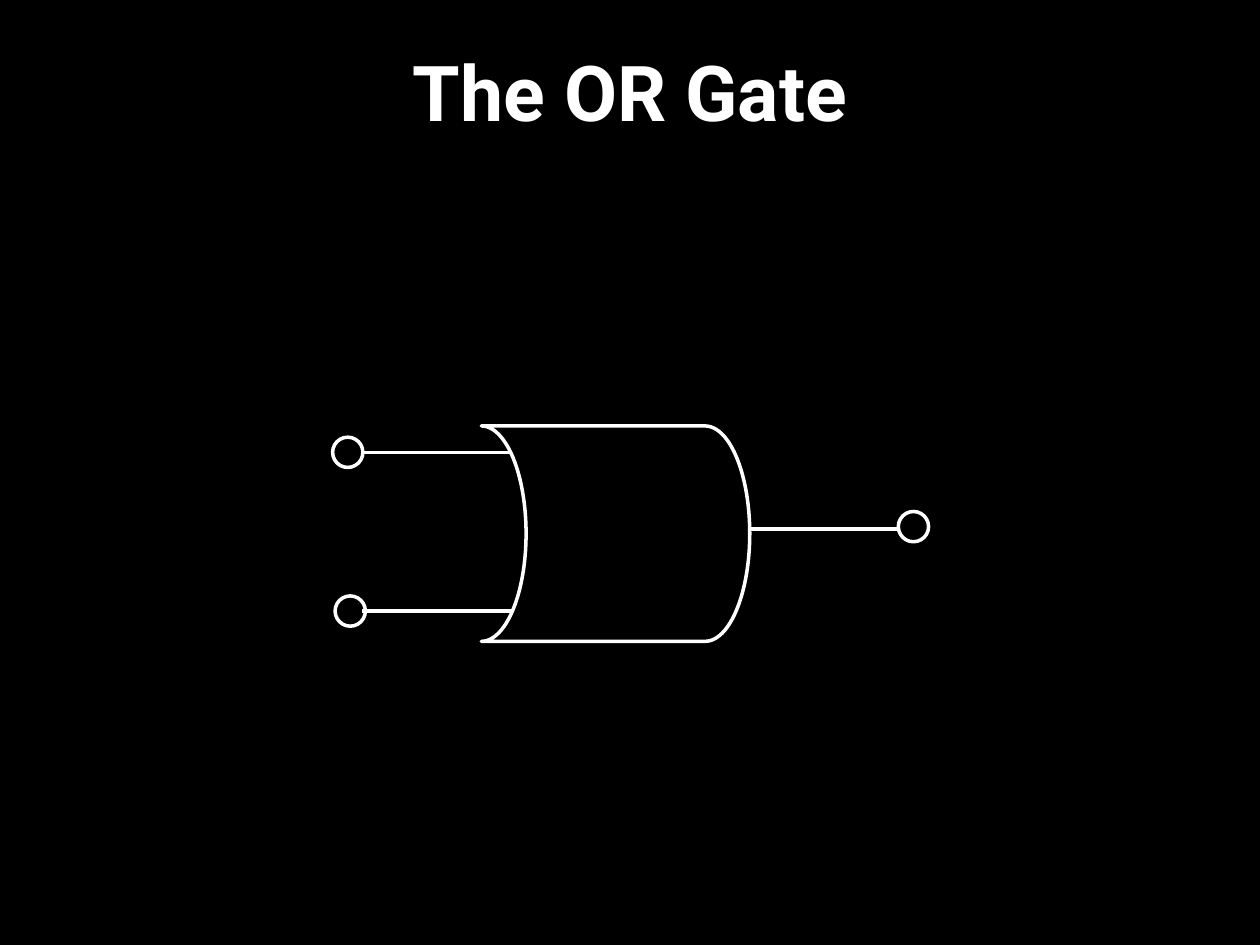
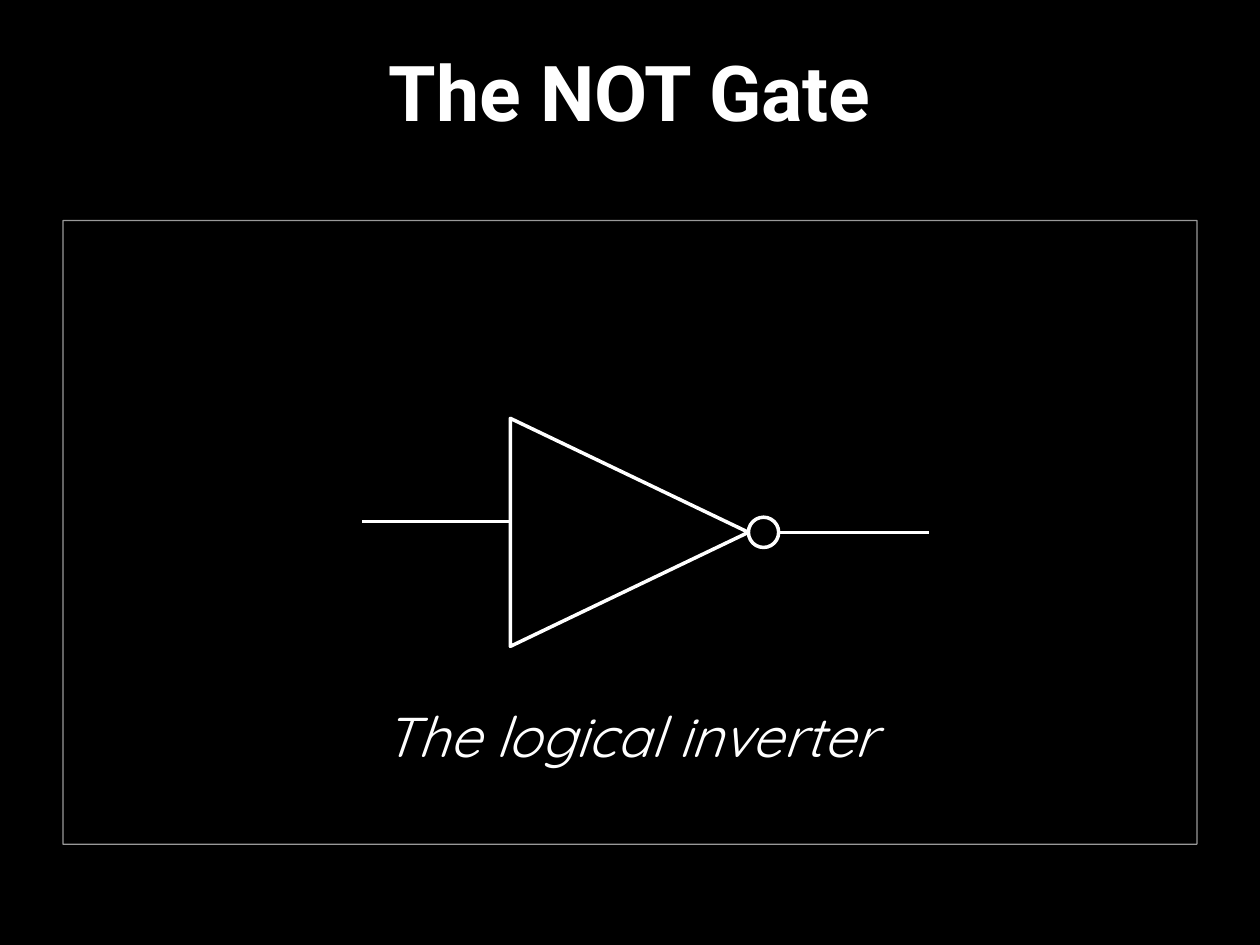
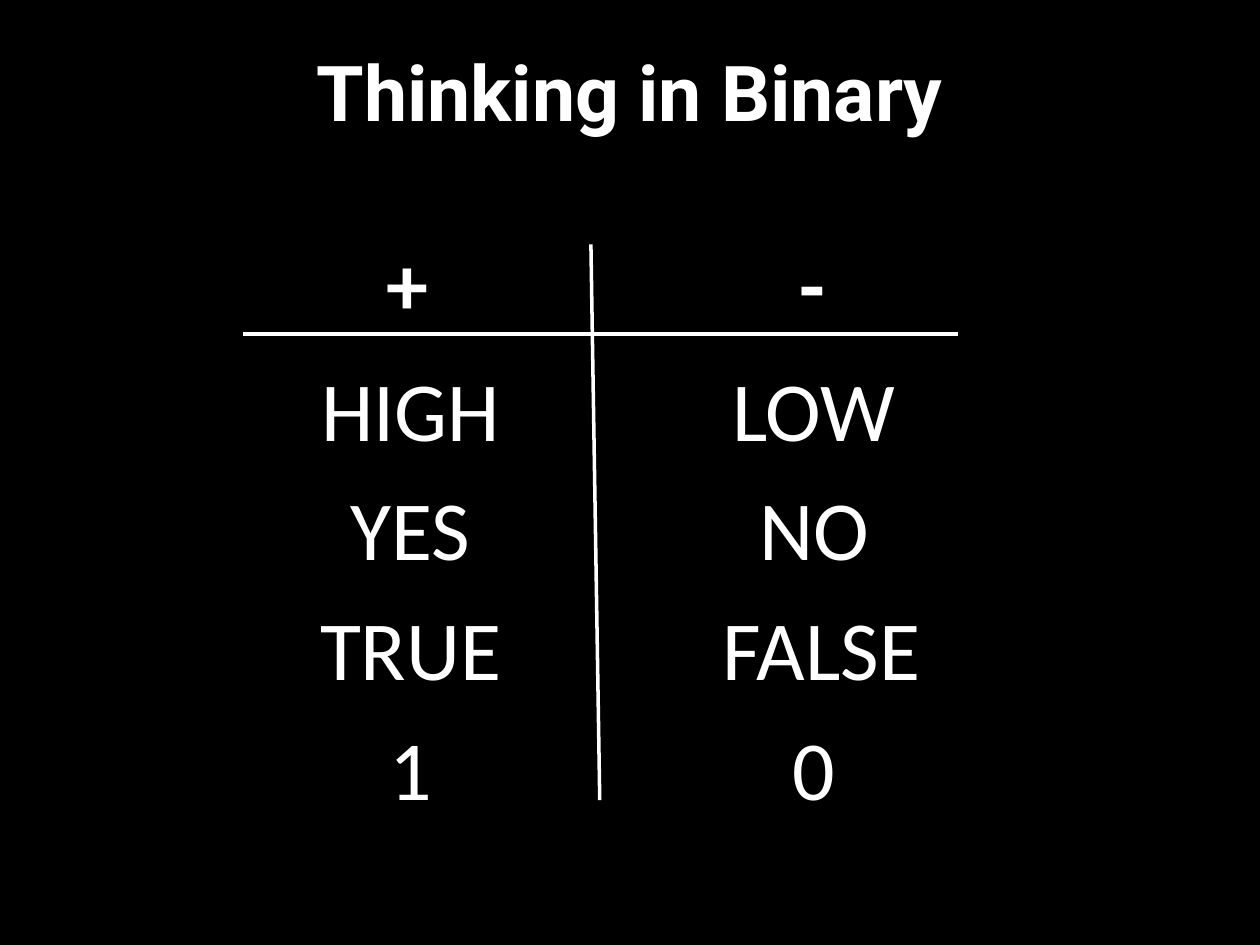
import lxml.etree
import pptx
import pptx.dml.color
import pptx.enum.shapes
import pptx.enum.text
import pptx.oxml.ns
import pptx.util

Inches = pptx.util.Inches
Shape = pptx.enum.shapes.MSO_SHAPE
Anchor = pptx.enum.text.MSO_ANCHOR
qn = pptx.oxml.ns.qn

COLOURS = {"ground": "000000", "ink": "FFFFFF"}
FONTS = {"title": "Roboto", "caption": "Quicksand", "label": "Calibri"}
STROKE = 2
LEAD = 1.19
NODE = 0.24


def colour(name):
    return pptx.dml.color.RGBColor.from_string(COLOURS[name])


def place(item, left, top, width, height):
    item.left, item.top = Inches(left), Inches(top)
    item.width, item.height = Inches(width), Inches(height)


def write(box, text, font, size, bold=False, italic=False, anchor=Anchor.TOP):
    frame = box.text_frame
    frame.word_wrap = True
    frame.auto_size = pptx.enum.text.MSO_AUTO_SIZE.NONE
    frame.vertical_anchor = anchor
    para = frame.paragraphs[0]
    para.alignment = pptx.enum.text.PP_ALIGN.CENTER
    para.space_before = pptx.util.Pt(0)
    span = para.add_run()
    span.text = text
    span.font.name = FONTS[font]
    span.font.size = pptx.util.Pt(size)
    span.font.bold = bold
    span.font.italic = italic
    span.font.color.rgb = colour("ink")


def draw_line(shapes, start, end):
    line = shapes.add_connector(
        pptx.enum.shapes.MSO_CONNECTOR.STRAIGHT,
        *(Inches(value) for value in (*start, *end)),
    )
    line.line.color.rgb = colour("ink")
    line.line.width = pptx.util.Pt(STROKE)
    properties = line._element.find(qn("p:spPr"))
    lxml.etree.SubElement(properties, qn("a:effectLst"))


def draw_outline(shapes, kind, left, top, width, height, turn=0):
    outline = shapes.add_shape(
        kind, *(Inches(value) for value in (left, top, width, height))
    )
    outline.shadow.inherit = False
    outline.fill.background()
    outline.line.color.rgb = colour("ink")
    outline.line.width = pptx.util.Pt(STROKE)
    outline.rotation = turn


def draw_node(shapes, left, top):
    draw_outline(shapes, Shape.FLOWCHART_CONNECTOR, left, top, NODE, NODE)


def set_alpha(fill, percent):
    fill_colour = fill._xPr.find(qn("a:solidFill"))[0]
    alpha = lxml.etree.SubElement(fill_colour, qn("a:alpha"))
    alpha.set("val", str(percent * 1000))


def add_page(deck, layout, title):
    page = deck.slides.add_slide(deck.slide_layouts.get_by_name(layout))
    place(page.shapes.title, 0.5, 0.3, 9, 1.25)
    write(page.shapes.title, title, "title", 44, bold=True)
    return page


def add_caption_panel(page, text, left, top, width, height):
    panel = page.placeholders[1]
    place(panel, left, top, width, height)
    panel.fill.solid()
    panel.fill.fore_color.rgb = colour("ground")
    set_alpha(panel.fill, 90)
    panel.line.color.rgb = colour("ink")
    panel.line.width = pptx.util.Pt(0.75)
    set_alpha(panel.line.fill, 60)
    panel.text_frame.margin_bottom = Inches(0.6)
    properties = panel.text_frame.paragraphs[0]._p.get_or_add_pPr()
    properties.set("marL", "0")
    properties.set("indent", "0")
    lxml.etree.SubElement(properties, qn("a:buNone"))
    write(panel, text, "caption", 32, italic=True, anchor=Anchor.BOTTOM)


def draw_or_gate(page, left, top):
    shapes = page.shapes.add_group_shape().shapes
    body_left, body_width, body_height = left + 1.18, 2.13, 1.71
    input_end = left + 1.42
    output_start = body_left + body_width - 0.01
    inputs = ((0, 0.21), (0.02, 1.47))
    for _, drop in inputs:
        draw_line(shapes, (input_end, top + drop), (input_end - LEAD, top + drop))
    output = top + 0.82
    draw_line(shapes, (output_start + LEAD, output), (output_start, output))
    for shift, drop in inputs:
        draw_node(shapes, left + shift, top + drop - NODE / 2)
    draw_node(shapes, output_start + LEAD, top + 0.68)
    draw_outline(shapes, Shape.FLOWCHART_STORED_DATA, body_left, top,
                 body_width, body_height, 180)


def draw_not_gate(page, left, top):
    shapes = page.shapes.add_group_shape().shapes
    across, tall = 1.89, 1.81
    base = left + LEAD
    tip = base + across - 0.01
    draw_line(shapes, (base, top + 0.82), (left, top + 0.82))
    middle = top + tall / 2
    draw_line(shapes, (tip + NODE + LEAD, middle), (tip + NODE, middle))
    draw_node(shapes, tip, middle - NODE / 2)
    inset = (across - tall) / 2
    draw_outline(shapes, Shape.FLOWCHART_EXTRACT, base - 0.01 + inset,
                 top - inset, tall, across, 90)


def add_label(page, text, left, top, width, bold=False):
    box = page.shapes.add_textbox(
        *(Inches(value) for value in (left, top, width, 0.55))
    )
    write(box, text, "label", 48, bold=bold, anchor=Anchor.MIDDLE)


def draw_binary_chart(page, left, top):
    draw_line(page.shapes, (left + 2.76, top), (left + 2.83, top + 4.41))
    draw_line(page.shapes, (left + 5.67, top + 0.71), (left, top + 0.71))
    columns = (
        (0.46, 0.79, "+", ("HIGH", "YES", "TRUE", "1")),
        (3.66, 4.01, "-", ("LOW", "NO", "FALSE", "0")),
    )
    for shift, sign_shift, sign, words in columns:
        add_label(page, sign, left + sign_shift, top + 0.02, 1.02, bold=True)
        for row, word in enumerate(words):
            width = 1.86 if word == "FALSE" else 1.74
            add_label(page, word, left + shift, top + 1.02 + row * 0.95, width)


def main():
    deck = pptx.Presentation()
    deck.slide_width, deck.slide_height = Inches(10), Inches(7.5)
    ground = deck.slide_master.background.fill
    ground.solid()
    ground.fore_color.rgb = colour("ground")

    draw_or_gate(add_page(deck, "Title Only", "The OR Gate"), 2.64, 3.38)

    inverter = add_page(deck, "Title and Content", "The NOT Gate")
    add_caption_panel(inverter, "The logical inverter", 0.5, 1.75, 9, 4.95)
    draw_not_gate(inverter, 2.87, 3.32)

    draw_binary_chart(add_page(deck, "Title Only", "Thinking in Binary"), 1.93, 1.94)

    deck.save("out.pptx")


if __name__ == "__main__":
    main()
